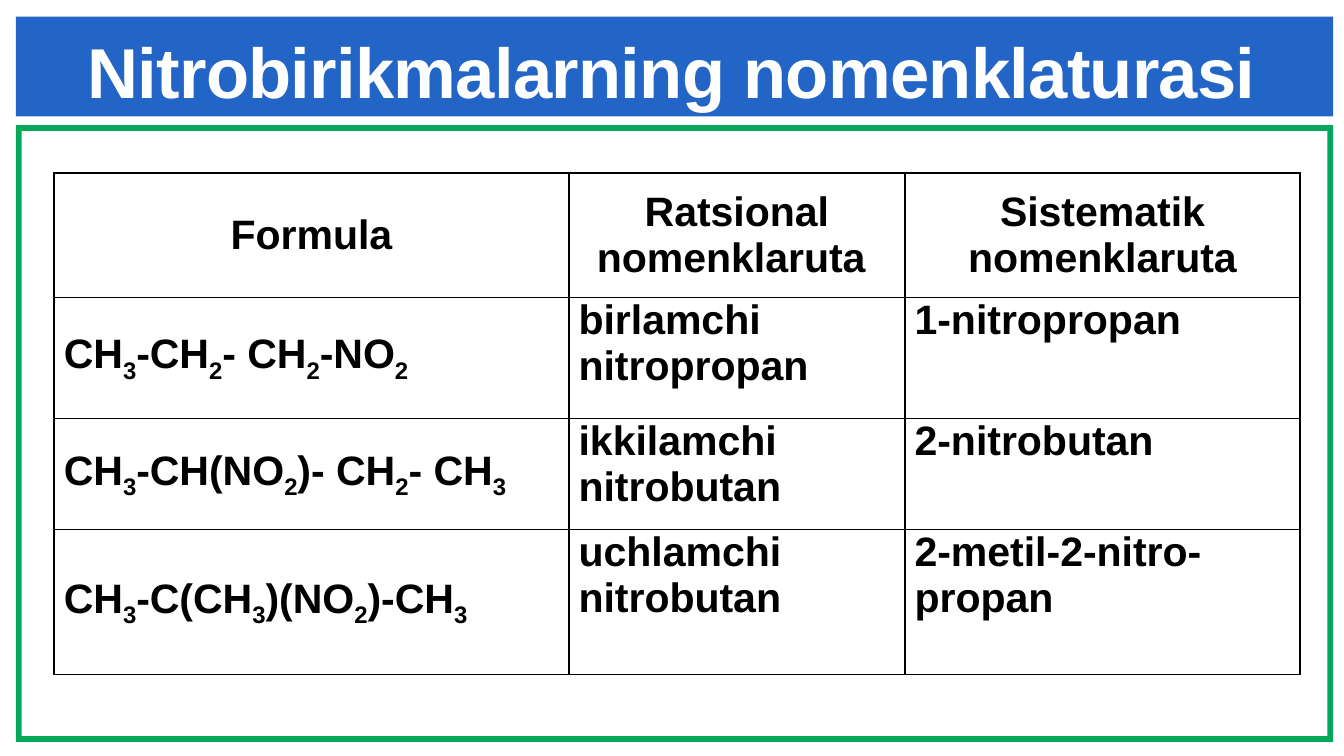
from itertools import groupby

from lxml import etree
from pptx import Presentation
from pptx import util as u
from pptx.dml.color import RGBColor
from pptx.enum import shapes, text
from pptx.oxml.ns import qn

Pt = u.Pt
FONT = "Arial"
BLACK, WHITE, BLUE, GREEN = "000000", "FEFEFE", "2365C7", "00A859"

HEADER = ["Formula", "Ratsional nomenklaruta ", "Sistematik nomenklaruta"]
COMPOUNDS = [
    ["CH3-CH2- CH2-NO2", "birlamchi nitropropan", "1-nitropropan"],
    ["CH3-CH(NO2)- CH2- CH3", "ikkilamchi nitrobutan", "2-nitrobutan"],
    ["CH3-C(CH3)(NO2)-CH3", "uchlamchi nitrobutan", "2-metil-2-nitro-propan"],
]
COL_WIDTHS = [275.8, 180, 211.7]
ROW_HEIGHTS = [66.6, 64.8, 59.6, 77.6]


def rgb(hex_color):
    return RGBColor.from_string(hex_color)


def add_run(p, words, size=22, color=BLACK, base=None, spacing=None):
    r = p.add_run()
    r.text = words
    r.font.name, r.font.size, r.font.bold = FONT, Pt(size), True
    r.font.color.rgb = rgb(color)
    if base is not None:
        r._r.get_or_add_rPr().set("baseline", str(base * 1000))
    if spacing is not None:
        r._r.get_or_add_rPr().set("spc", str(int(spacing * 100)))


def add_block(s, kind, box, color):
    sp = s.shapes.add_shape(kind, *map(Pt, box))
    sp.shadow.inherit = False
    sp.fill.solid()
    sp.fill.fore_color.rgb = rgb(color)
    sp.line.fill.background()
    return sp


def add_formula(p, formula):
    # Every digit in a formula is a subscript
    for is_digit, chars in groupby(formula, str.isdigit):
        add_run(p, "".join(chars), base=-25 if is_digit else None)


def set_borders(cell, width=1):
    tcPr = cell._tc.get_or_add_tcPr()
    for i, side in enumerate(("lnL", "lnR", "lnT", "lnB")):
        ln = etree.Element(qn("a:" + side), w=str(Pt(width)))
        fill = etree.SubElement(ln, qn("a:solidFill"))
        etree.SubElement(fill, qn("a:srgbClr"), val=BLACK)
        tcPr.insert(i, ln)


def title_band(s, x, y, w, h):
    add_block(s, shapes.MSO_SHAPE.RECTANGLE, (x, y, w, h), BLUE)
    # Title sits slightly low in the band
    tb = s.shapes.add_textbox(Pt(x + 8), Pt(y + 8), Pt(w - 19.5), Pt(h - 5))
    tf = tb.text_frame
    tf.word_wrap = True
    tf.vertical_anchor = text.MSO_ANCHOR.MIDDLE
    tf.margin_left = tf.margin_right = tf.margin_top = tf.margin_bottom = 0
    p = tf.paragraphs[0]
    p.alignment = text.PP_ALIGN.CENTER
    p.line_spacing = 0.86
    add_run(p, "Nitrobirikmalarning nomenklaturasi", size=37.8, color=WHITE, spacing=-0.4)


def content_frame(s, x, y, w, h, thickness=3.1):
    sp = add_block(s, shapes.MSO_SHAPE.FRAME, (x, y, w, h), GREEN)
    sp.adjustments[0] = thickness / min(w, h)


def compound_table(s, x, y, w, h):
    rows = [HEADER] + COMPOUNDS
    table = s.shapes.add_table(len(rows), len(HEADER), Pt(x), Pt(y), Pt(w), Pt(h)).table
    table.first_row = table.horz_banding = False
    for col, width in zip(table.columns, COL_WIDTHS):
        col.width = Pt(width * w / sum(COL_WIDTHS))
    for row, height in zip(table.rows, ROW_HEIGHTS):
        row.height = Pt(height * h / sum(ROW_HEIGHTS))

    for i, row in enumerate(rows):
        for j, words in enumerate(row):
            cell = table.cell(i, j)
            cell.fill.background()
            cell.margin_left = cell.margin_right = Pt(5.2)
            cell.margin_top = cell.margin_bottom = 0
            middle = i == 0 or j == 0
            cell.vertical_anchor = text.MSO_ANCHOR.MIDDLE if middle else text.MSO_ANCHOR.TOP
            p = cell.text_frame.paragraphs[0]
            p.alignment = text.PP_ALIGN.LEFT if i else text.PP_ALIGN.CENTER
            if i and j == 0:
                add_formula(p, words)
            else:
                add_run(p, words)
            set_borders(cell)


def main():
    prs = Presentation()
    prs.slide_width, prs.slide_height = Pt(720), Pt(405)
    s = prs.slides.add_slide(prs.slide_layouts[6])
    content_frame(s, 8.5, 67, 705.7, 330.5)
    title_band(s, 8.5, 8.9, 705.7, 53.5)
    compound_table(s, 29, 92.8, sum(COL_WIDTHS), sum(ROW_HEIGHTS))
    prs.save("out.pptx")


if __name__ == "__main__":
    main()
